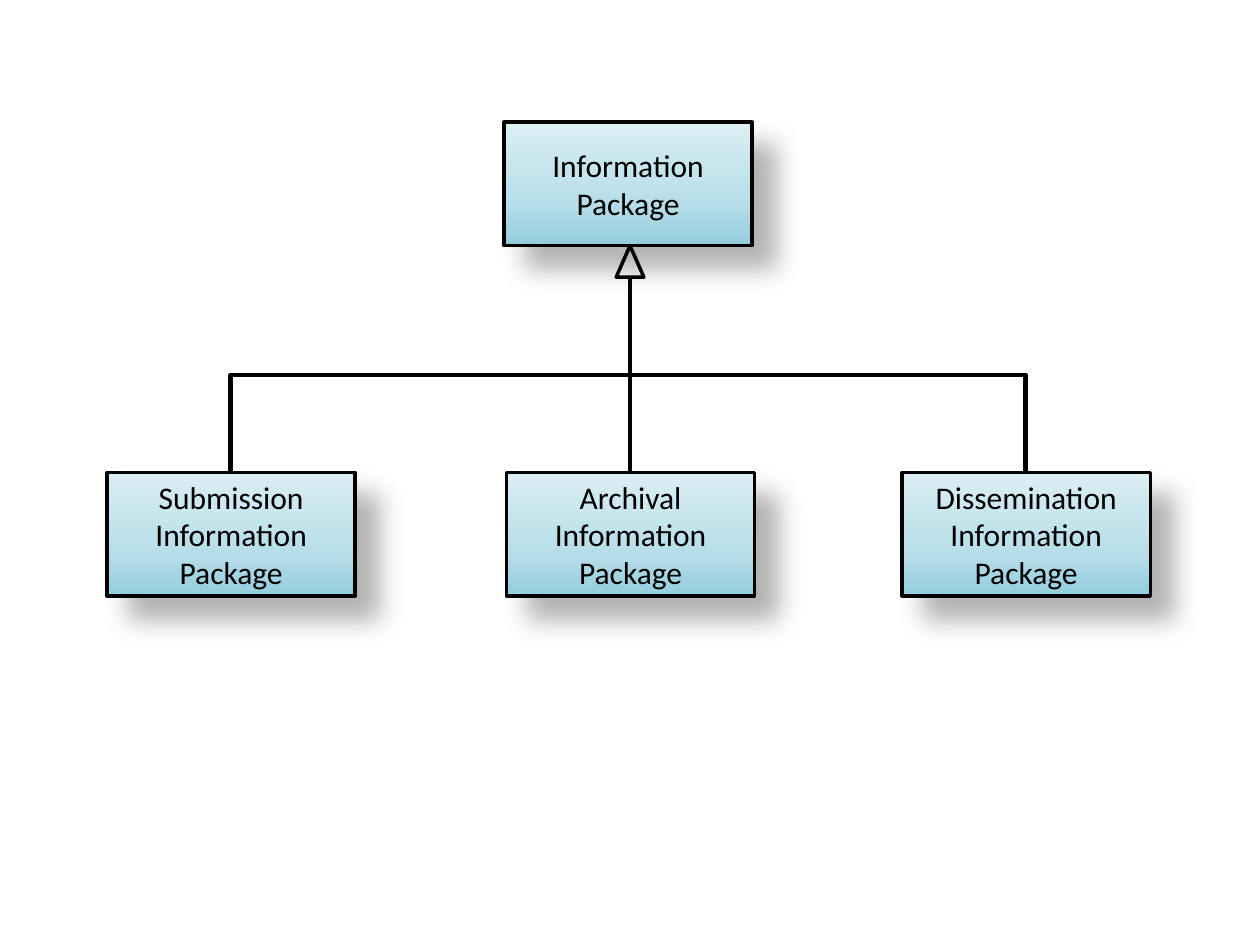
from dataclasses import dataclass
from lxml.etree import SubElement as Sub
from pptx import Presentation
from pptx.dml.color import RGBColor as RGB
from pptx.enum.shapes import MSO_CONNECTOR as Conn, MSO_SHAPE as Kind
from pptx.enum.text import MSO_ANCHOR as Anchor, MSO_AUTO_SIZE as Fit, PP_ALIGN as Align
from pptx.oxml.ns import qn
from pptx.util import Inches, Pt


@dataclass(frozen=True)
class Theme:
    ink: str = "000000"
    stops: tuple = ((0, "93CDDD"), (35, "B7DEE8"), (100, "DBEEF4"))
    font: str = "Calibri"
    size: float = 18
    edge: float = 2
    wire: float = 2.5
    shade: tuple = (("blurRad", 15 * 12700), ("dist", 18 * 12700), ("dir", 45 * 60000))
    alpha: int = 30


def apply(obj, form):
    for name, value in form.items():
        setattr(obj, name, value)


class Chart:
    """Draws styled package boxes and the links between them."""

    def __init__(self, slide, theme):
        self.slide, self.theme = slide, theme

    def tint(self, node, color):
        return Sub(node, qn("a:srgbClr"), val=color)

    def stroke(self, line, width):
        line.fill.solid()
        line.fill.fore_color.rgb = RGB.from_string(self.theme.ink)
        line.width = Pt(width)

    def shape(self, kind, *place):
        item = self.slide.shapes.add_shape(kind, *map(Inches, place))
        item.shadow.inherit = False
        self.stroke(item.line, self.theme.edge)
        return item

    def blend(self, fill):
        fill.gradient()
        fill.gradient_angle = 90
        row = fill._xPr.find(qn("a:gradFill")).find(qn("a:gsLst"))
        for old in list(row):
            row.remove(old)
        for spot, color in self.theme.stops:
            self.tint(Sub(row, qn("a:gs"), pos=str(spot * 1000)), color)

    def shadow(self, item):
        glow = item._element.spPr.find(qn("a:effectLst"))
        drop = Sub(glow, qn("a:outerShdw"), algn="tl", rotWithShape="0")
        for name, value in self.theme.shade:
            drop.set(name, str(value))
        color = self.tint(drop, self.theme.ink)
        Sub(color, qn("a:alpha"), val=str(self.theme.alpha * 1000))

    def box(self, text, *place):
        item = self.shape(Kind.RECTANGLE, *place)
        self.blend(item.fill)
        self.shadow(item)
        frame = item.text_frame
        frame.text = text
        apply(frame, {"word_wrap": True, "auto_size": Fit.NONE,
                      "vertical_anchor": Anchor.MIDDLE})
        for para in frame.paragraphs:
            para.alignment = Align.CENTER
            apply(para.font, {"name": self.theme.font, "size": Pt(self.theme.size)})
            para.font.color.rgb = RGB.from_string(self.theme.ink)

    def head(self, *place):
        self.shape(Kind.ISOSCELES_TRIANGLE, *place).fill.background()

    def link(self, start, end):
        """Add an elbow that leaves its start upwards."""
        (x1, y1), (x2, y2) = start, end
        mid, level = (x1 + x2) / 2, (y1 + y2) / 2
        rise, run = (y1 - y2) / 2, (x2 - x1) / 2
        ends = mid - rise, level - run, mid + rise, level + run
        wire = self.slide.shapes.add_connector(Conn.ELBOW, *map(Inches, ends))
        wire._element.spPr.find(qn("a:xfrm")).set("rot", str(270 * 60000))
        self.stroke(wire.line, self.theme.wire)
        Sub(wire._element.spPr, qn("a:effectLst"))


def main():
    deck = Presentation()
    apply(deck, {"slide_width": Inches(10), "slide_height": Inches(7.5)})
    chart = Chart(deck.slides.add_slide(deck.slide_layouts[6]), Theme())
    wide, high, top, axis, tip = 1.97, 0.98, 3.75, 5, 2.2
    chart.box("Information\nPackage", 4, 0.97, wide, high)
    chart.head(axis - 0.11, 1.95, 0.22, 0.25)
    kids = (("Dissemination", 7.16), ("Archival", 4.02), ("Submission", 0.85))
    for name, left in kids:
        chart.box(f"{name} Information Package", left, top, wide, high)
    for name, left in kids:
        chart.link((round(left + wide / 2, 2), top), (axis, tip))
    deck.save("out.pptx")


if __name__ == "__main__":
    main()
